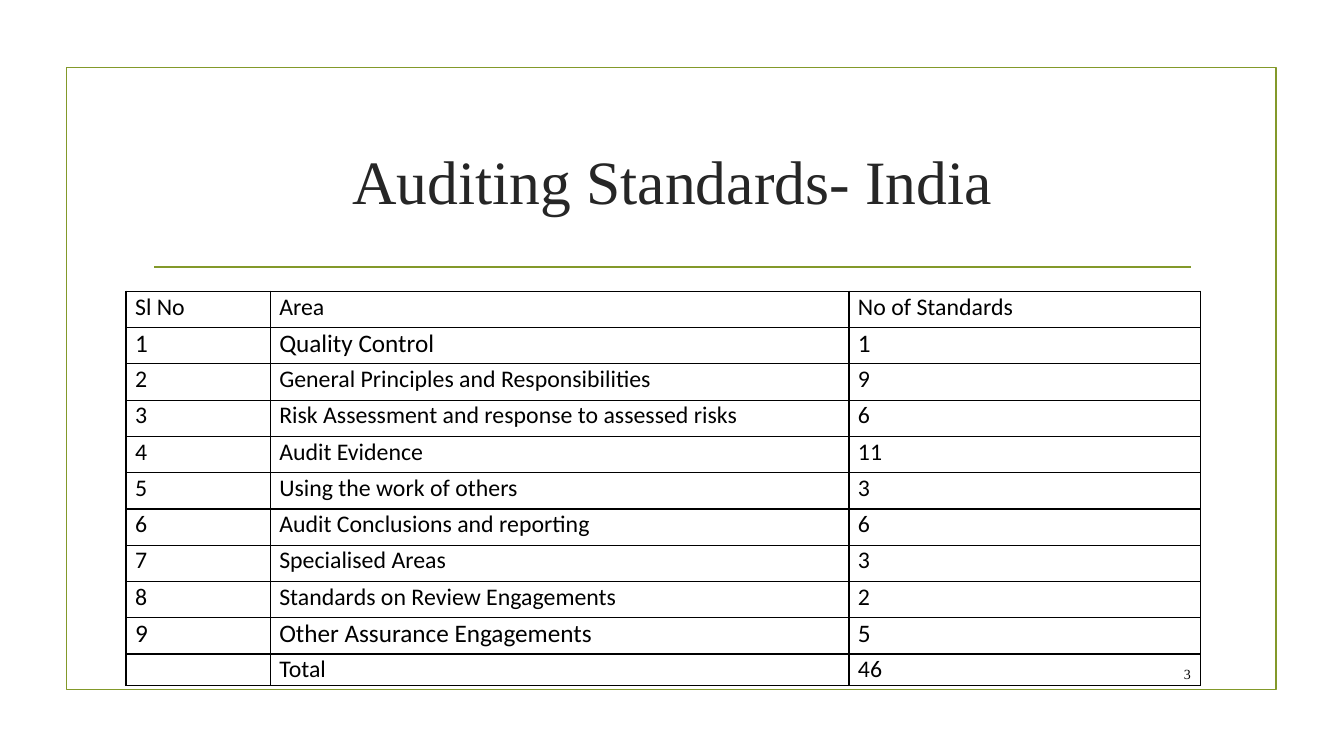
import pptx
import pptx.util
import pptx.dml.color
import pptx.enum.shapes
import pptx.enum.text
import pptx.oxml
import pptx.oxml.ns

Inches, Pt = pptx.util.Inches, pptx.util.Pt
ALIGN = pptx.enum.text.PP_ALIGN
MIDDLE = pptx.enum.text.MSO_ANCHOR.MIDDLE

TITLE = "Auditing Standards- India"
PAGE = "3"
ROWS = [
    ("Sl No", "Area", "No of Standards"),
    ("1", "Quality Control", "1"),
    ("2", "General Principles and Responsibilities", "9"),
    ("3", "Risk Assessment and response to assessed risks", "6"),
    ("4", "Audit Evidence", "11"),
    ("5", "Using the work of others", "3"),
    ("6", "Audit Conclusions and reporting", "6"),
    ("7", "Specialised Areas", "3"),
    ("8", "Standards on Review Engagements", "2"),
    ("9", "Other Assurance Engagements", "5"),
    ("", "Total", "46"),
]
LARGE = (1, 9)  # rows set in 18 pt
WIDTHS = (1.43, 5.74, 3.49)
HEIGHTS = [0.36] * (len(ROWS) - 1) + [0.31]
COLORS = {"olive": "83992A", "title": "262626", "text": "000000"}
SERIF, SANS = "Times New Roman", "Calibri"


def color(name):
    return pptx.dml.color.RGBColor.from_string(COLORS[name])


def write(frame, text, size, font, tint, align):
    para = frame.paragraphs[0]
    para.alignment = align
    run = para.add_run()
    run.text = text
    run.font.size = Pt(size)
    run.font.name = font
    run.font.color.rgb = color(tint)


def border(cell):
    """Draw a thin black line on all four sides of a cell."""
    props = cell._tc.get_or_add_tcPr()
    for i, side in enumerate(("lnL", "lnR", "lnT", "lnB")):
        props.insert(i, pptx.oxml.parse_xml(
            f'<a:{side} {pptx.oxml.ns.nsdecls("a")} w="{Pt(1)}"><a:solidFill>'
            f'<a:srgbClr val="{COLORS["text"]}"/></a:solidFill></a:{side}>'))


def add_frame(slide):
    frame = slide.shapes.add_shape(
        pptx.enum.shapes.MSO_SHAPE.RECTANGLE,
        Inches(0.66), Inches(0.67), Inches(12), Inches(6.17))
    frame.shadow.inherit = False
    frame.fill.background()
    rule = slide.shapes.add_connector(
        pptx.enum.shapes.MSO_CONNECTOR.STRAIGHT,
        Inches(1.53), Inches(2.65), Inches(11.81), Inches(2.65))
    rule._element.spPr.append(pptx.oxml.parse_xml(
        f'<a:effectLst {pptx.oxml.ns.nsdecls("a")}/>'))
    for shape in (frame, rule):
        shape.line.color.rgb = color("olive")
        shape.line.width = Pt(1.25)


def add_title(slide):
    title = slide.shapes.title
    title.left, title.top = Inches(1.42), Inches(1.07)
    title.width, title.height = Inches(10.5), Inches(1.43)
    title.text_frame.vertical_anchor = MIDDLE
    write(title.text_frame, TITLE, 44, SERIF, "title", ALIGN.CENTER)


def add_grid(slide):
    table = slide.shapes.add_table(
        len(ROWS), len(WIDTHS), Inches(1.25), Inches(2.89),
        Inches(sum(WIDTHS)), Inches(sum(HEIGHTS))).table
    table.first_row = table.horz_banding = False
    for col, width in zip(table.columns, WIDTHS):
        col.width = Inches(width)
    for r, (row, texts) in enumerate(zip(table.rows, ROWS)):
        row.height = Inches(HEIGHTS[r])
        size = 18 if r in LARGE else 17
        for cell, text in zip(row.cells, texts):
            cell.fill.background()
            cell.margin_left = cell.margin_right = Inches(0.09)
            cell.margin_top, cell.margin_bottom = Inches(0.01), 0
            border(cell)
            write(cell.text_frame, text, size, SANS, "text", ALIGN.JUSTIFY)


def add_page(slide):
    box = slide.shapes.add_textbox(
        Inches(11.32), Inches(6.53), Inches(0.59), Inches(0.31))
    box.text_frame.word_wrap = True
    box.text_frame.vertical_anchor = MIDDLE
    write(box.text_frame, PAGE, 10, SERIF, "text", ALIGN.RIGHT)


def main():
    deck = pptx.Presentation()
    deck.slide_width, deck.slide_height = Inches(13.33), Inches(7.5)
    slide = deck.slides.add_slide(deck.slide_layouts[5])
    add_frame(slide)
    add_title(slide)
    add_grid(slide)
    add_page(slide)
    deck.save("out.pptx")


if __name__ == "__main__":
    main()
